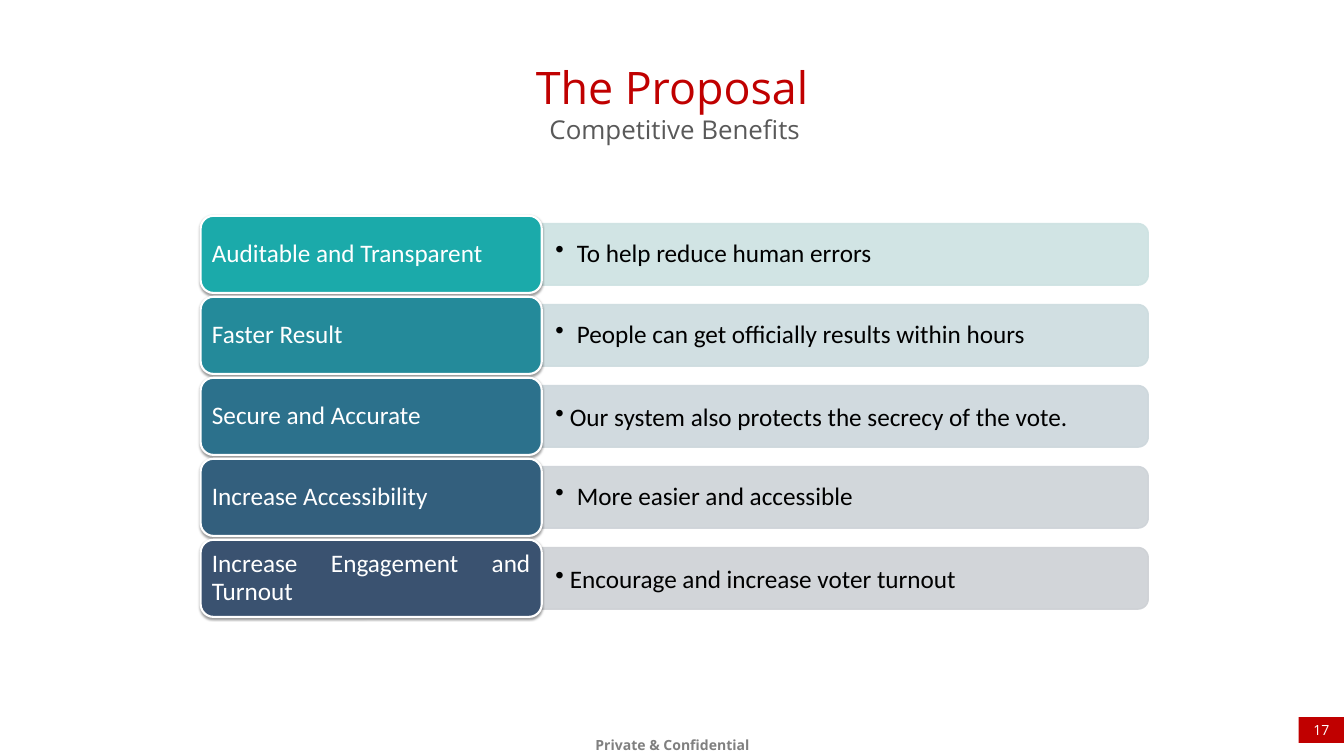
"""Build the competitive benefits slide of the proposal."""
from dataclasses import dataclass

import pptx
import pptx.dml.color
import pptx.enum.shapes
import pptx.enum.text
import pptx.oxml.ns
import pptx.util
from lxml import etree

Pt = pptx.util.Pt
RGBColor = pptx.dml.color.RGBColor
Align = pptx.enum.text.PP_ALIGN
Anchor = pptx.enum.text.MSO_ANCHOR
Shape = pptx.enum.shapes.MSO_SHAPE
qn = pptx.oxml.ns.qn

RED = RGBColor(0xC0, 0x00, 0x00)
WHITE = RGBColor(0xFF, 0xFF, 0xFF)
BLACK = RGBColor(0x00, 0x00, 0x00)
DARK_GRAY = RGBColor(0x59, 0x59, 0x59)
MID_GRAY = RGBColor(0x80, 0x80, 0x80)
HEADING_FONT, BODY_FONT = "Open Sans", "Calibri"
HEADING_MARGINS = (19.2, 9.6)

ROW_TOP, ROW_PITCH = 308.3, 115.7
LABEL_LEFT, LABEL_WIDTH, LABEL_HEIGHT = 286.6, 487.4, 110.2
PANEL_LEFT, PANEL_WIDTH, PANEL_HEIGHT = 774.2, 866.2, 88


@dataclass(frozen=True)
class Benefit:
    label: str
    detail: str
    label_color: RGBColor
    panel_color: RGBColor
    indent: float = 30.6
    line_spacing: float = 0.9


BENEFITS = [
    Benefit("Auditable and Transparent", "To help reduce human errors",
            RGBColor(0x1B, 0xAA, 0xAA), RGBColor(0xCD, 0xE2, 0xE2)),
    Benefit("Faster Result", "People can get officially results within hours",
            RGBColor(0x24, 0x8A, 0x9A), RGBColor(0xCD, 0xDC, 0xDF)),
    Benefit("Secure and Accurate", "Our system also protects the secrecy of the vote.",
            RGBColor(0x2C, 0x71, 0x8C), RGBColor(0xCD, 0xD7, 0xDC), 20.6, 1.0),
    Benefit("Increase Accessibility", "More easier and accessible",
            RGBColor(0x33, 0x5F, 0x7D), RGBColor(0xCE, 0xD3, 0xD8)),
    Benefit("Increase Engagement and Turnout", "Encourage and increase voter turnout",
            RGBColor(0x3A, 0x52, 0x70), RGBColor(0xCE, 0xD1, 0xD5), 20.6, 1.0),
]


def write_text(shape, text: str, *, size: float, color: RGBColor, font: str = HEADING_FONT,
               bold: bool = False, align=Align.CENTER, anchor=Anchor.TOP,
               margins: tuple[float, float] = (0, 0), line_spacing: float = 1.0,
               bullet_indent: float = 0) -> None:
    frame = shape.text_frame
    frame.word_wrap = True
    frame.auto_size = pptx.enum.text.MSO_AUTO_SIZE.NONE
    frame.vertical_anchor = anchor
    frame.margin_left = frame.margin_right = Pt(margins[0])
    frame.margin_top = frame.margin_bottom = Pt(margins[1])
    paragraph = frame.paragraphs[0]
    paragraph.alignment = align
    paragraph.line_spacing = line_spacing
    if bullet_indent:
        properties = paragraph._p.get_or_add_pPr()
        properties.set("marL", str(Pt(bullet_indent)))
        properties.set("indent", str(-Pt(bullet_indent)))
        etree.SubElement(properties, qn("a:buChar"), char="•")
    run = paragraph.add_run()
    run.text = text
    run.font.size = Pt(size)
    run.font.name = font
    run.font.bold = bold
    run.font.color.rgb = color


def add_text_box(slide, left: float, top: float, width: float, height: float):
    return slide.shapes.add_textbox(Pt(left), Pt(top), Pt(width), Pt(height))


def add_filled_shape(slide, kind, left: float, top: float, width: float, height: float,
                     fill: RGBColor, line: RGBColor | None = None, line_width: float = 0):
    shape = slide.shapes.add_shape(kind, Pt(left), Pt(top), Pt(width), Pt(height))
    shape.shadow.inherit = False
    shape.fill.solid()
    shape.fill.fore_color.rgb = fill
    if line is None:
        shape.line.fill.background()
    else:
        shape.line.color.rgb = line
        shape.line.width = Pt(line_width)
    return shape


def add_alpha(color_element, percent: int) -> None:
    etree.SubElement(color_element, qn("a:alpha"), val=str(percent * 1000))


def add_soft_shadow(shape) -> None:
    effects = shape._element.spPr.find(qn("a:effectLst"))
    shadow = etree.SubElement(effects, qn("a:outerShdw"), blurRad=str(Pt(3.1)),
                              dist=str(Pt(1.6)), dir="5400000", rotWithShape="0")
    add_alpha(etree.SubElement(shadow, qn("a:srgbClr"), val=str(BLACK)), 38)


def add_benefit(slide, benefit: Benefit, top: float) -> None:
    center_x = PANEL_LEFT + PANEL_WIDTH / 2
    center_y = top + LABEL_HEIGHT / 2
    panel = add_filled_shape(slide, Shape.ROUND_2_SAME_RECTANGLE,
                             center_x - PANEL_HEIGHT / 2, center_y - PANEL_WIDTH / 2,
                             PANEL_HEIGHT, PANEL_WIDTH,
                             benefit.panel_color, benefit.panel_color, 2)
    panel.rotation = 90
    for color_element in list(panel._element.spPr.iter(qn("a:srgbClr"))):
        add_alpha(color_element, 90)

    detail = add_text_box(slide, PANEL_LEFT, center_y - 39.6, 862.6, 79.2)
    write_text(detail, benefit.detail, size=36, color=BLACK, font=BODY_FONT,
               align=Align.JUSTIFY, anchor=Anchor.MIDDLE, margins=(19.2, 9.8),
               line_spacing=benefit.line_spacing, bullet_indent=benefit.indent)

    label = add_filled_shape(slide, Shape.ROUNDED_RECTANGLE, LABEL_LEFT, top,
                             LABEL_WIDTH, LABEL_HEIGHT, benefit.label_color, WHITE, 3)
    add_soft_shadow(label)
    write_text(label, benefit.label, size=36, color=WHITE, font=BODY_FONT,
               align=Align.JUSTIFY, anchor=Anchor.MIDDLE, margins=(10.8, 5.4),
               line_spacing=0.9)


def main() -> None:
    presentation = pptx.Presentation()
    presentation.slide_width, presentation.slide_height = Pt(1920), Pt(1080)
    slide = presentation.slides.add_slide(presentation.slide_layouts.get_by_name("Title Only"))

    title = slide.shapes.title
    title.left, title.top, title.width, title.height = Pt(110), Pt(75), Pt(1700), Pt(97)
    write_text(title, "The Proposal", size=64, color=RED, margins=HEADING_MARGINS)
    subtitle = add_text_box(slide, 113.8, 153.4, 1700, 64.8)
    write_text(subtitle, "Competitive Benefits", size=37, color=DARK_GRAY,
               margins=HEADING_MARGINS)

    for index, benefit in enumerate(BENEFITS):
        add_benefit(slide, benefit, ROW_TOP + index * ROW_PITCH)

    footer = add_text_box(slide, 830, 1038.2, 261.4, 56.2)
    write_text(footer, "Private & Confidential", size=20, color=MID_GRAY, bold=True,
               margins=(17.3, 8.6), line_spacing=1.2)
    page_number = add_filled_shape(slide, Shape.RECTANGLE, 1855.2, 1024.6, 64.8, 36.7, RED)
    write_text(page_number, "17", size=20, color=WHITE, anchor=Anchor.MIDDLE)

    presentation.save("out.pptx")


if __name__ == "__main__":
    main()
